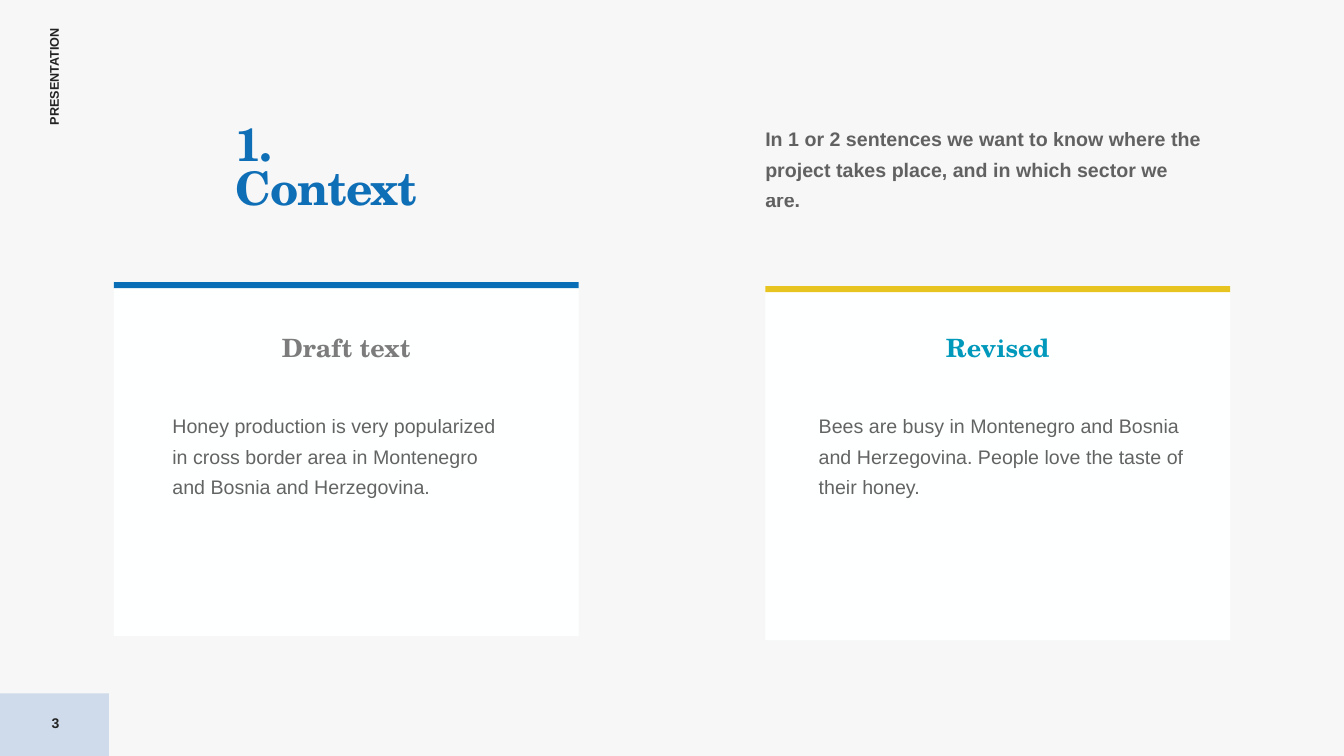
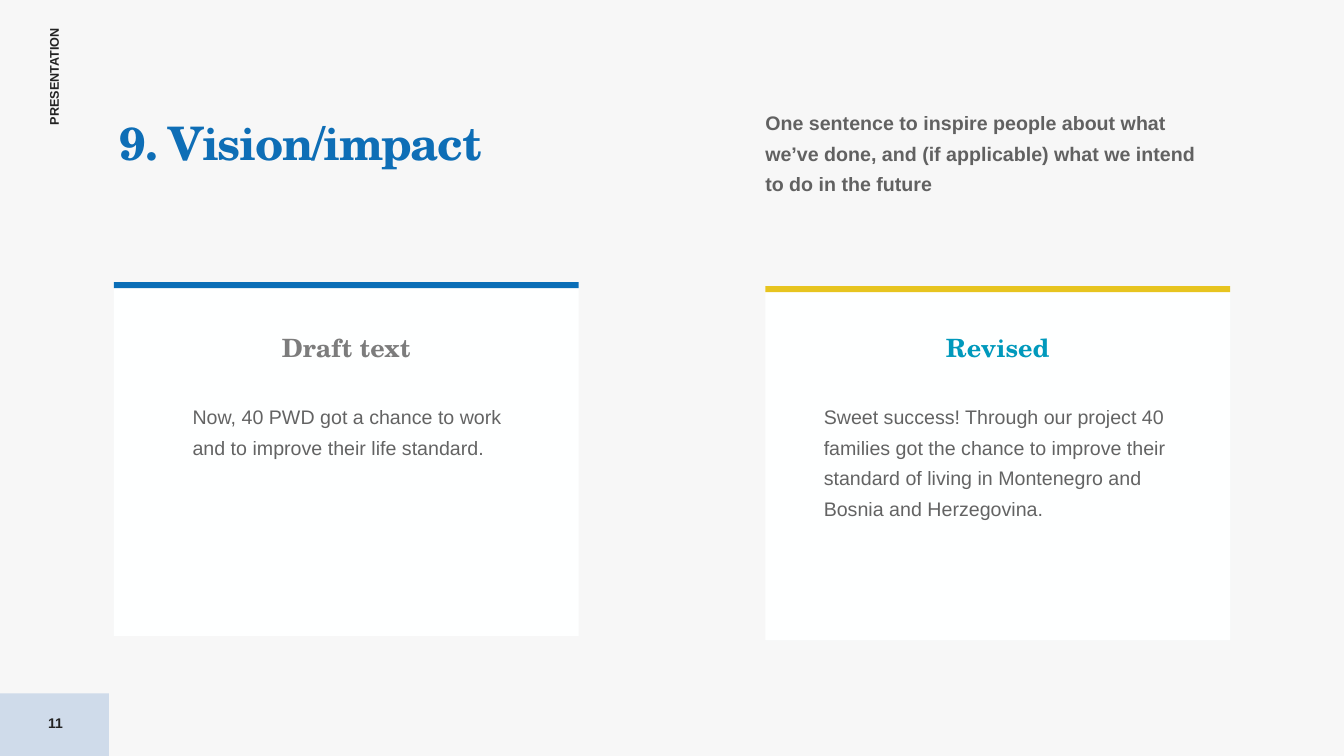
from lxml.etree import SubElement
from pptx import Presentation
from pptx.dml.color import RGBColor
from pptx.enum.shapes import MSO_SHAPE
from pptx.enum.text import MSO_ANCHOR, PP_ALIGN
from pptx.oxml.ns import qn
from pptx.util import Inches, Pt

COLORS = {
    "background": "F7F7F7", "card": "FEFFFF", "footer": "CFDBEA", "ink": "222222",
    "title": "0E6EB6", "blue": "0A6EB7", "yellow": "E7C41F",
    "gray": "7C7C7C", "teal": "0099BC",
}

# Insets run left, top, right, bottom.
BODY = {"font": {"name": "Arial", "size": Pt(14)}, "color": "ink", "opacity": 70,
        "line_spacing": 1.3, "insets": (0, 0.04, 0.24, 0.04)}
HINT = {**BODY, "font": {**BODY["font"], "bold": True}}
TITLE = {"font": {"name": "TeX Gyre Schola", "size": Pt(33), "bold": True},
         "color": "title", "line_spacing": 0.8, "tracking": -1,
         "insets": (0, 0.21, 0, 0)}
HEADING = {"font": {"name": "TeX Gyre Schola", "size": Pt(18), "bold": True},
           "line_spacing": 1.3, "insets": (0, 0, 0, 0),
           "alignment": PP_ALIGN.CENTER, "anchor": MSO_ANCHOR.MIDDLE}
LABEL = {"font": {"name": "Arial", "size": Pt(9), "bold": True},
         "color": "ink", "wrap": False}
NUMBER = {"font": {"name": "Arial", "size": Pt(10), "bold": True}, "color": "ink",
          "alignment": PP_ALIGN.CENTER, "anchor": MSO_ANCHOR.MIDDLE}

CARD_WIDTH, CARD_HEIGHT, STRIPE_HEIGHT = 4.61, 3.51, 0.06
HEADING_TOP, HEADING_WIDTH, HEADING_HEIGHT = 3.23, 3.45, 0.35
CARDS = [
    {"heading": "Draft text", "left": 1.13, "top": 2.8, "stripe": "blue", "color": "gray"},
    {"heading": "Revised", "left": 7.59, "top": 2.84, "stripe": "yellow", "color": "teal"},
]

# Each text is followed by its place: left, top, width, height.
PAGES = [
    {"number": "3",
     "title": ("1. Context", (2.34, 1.04, 2.2, 0.89)),
     "hint": ("In 1 or 2 sentences we want to know where the project takes place, "
              "and in which sector we are.", (7.59, 1.15, 4.61, 0.97)),
     "bodies": [
         ("Honey production is very popularized in cross border area in Montenegro "
          "and Bosnia and Herzegovina.", (1.71, 4, 3.63, 0.97)),
         ("Bees are busy in Montenegro and Bosnia and Herzegovina. People love the "
          "taste of their honey.", (8.12, 4, 4.03, 0.97))]},
    {"number": "11",
     "title": ("9. Vision/impact", (1.19, 1.03, 4.49, 0.89)),
     "hint": ("One sentence to inspire people about what we’ve done, and (if "
              "applicable) what we intend to do in the future", (7.59, 0.99, 4.61, 0.97)),
     "bodies": [
         ("Now, 40 PWD got a chance to work and to improve their life standard.",
          (1.91, 3.91, 3.63, 0.66)),
         ("Sweet success! Through our project 40 families got the chance to improve "
          "their standard of living in Montenegro and Bosnia and Herzegovina.",
          (8.17, 3.91, 3.88, 1.27))]},
]


def color(name):
    return RGBColor.from_string(COLORS[name])


def add_block(page, place, fill):
    block = page.shapes.add_shape(MSO_SHAPE.RECTANGLE, *map(Inches, place))
    block.shadow.inherit = False
    block.fill.solid()
    block.fill.fore_color.rgb = color(fill)
    block.line.fill.background()


def add_text(page, text, place, style):
    box = page.shapes.add_textbox(*map(Inches, place))
    frame = box.text_frame
    frame.word_wrap = style.get("wrap", True)
    frame.vertical_anchor = style.get("anchor", MSO_ANCHOR.TOP)
    for side, inset in zip(("left", "top", "right", "bottom"), style.get("insets", ())):
        setattr(frame, f"margin_{side}", Inches(inset))
    para = frame.paragraphs[0]
    para.alignment = style.get("alignment", PP_ALIGN.LEFT)
    para.line_spacing = style.get("line_spacing")
    span = para.add_run()
    span.text = text
    for name, value in style["font"].items():
        setattr(span.font, name, value)
    span.font.color.rgb = color(style["color"])
    properties = span.font._element
    if "opacity" in style:
        tint = properties.find(".//" + qn("a:srgbClr"))
        SubElement(tint, qn("a:alpha"), val=str(style["opacity"] * 1000))
    if "tracking" in style:
        properties.set("spc", str(style["tracking"] * 100))
    return box


def add_frame(page, number):
    """Add the side label and page number that every slide carries."""
    add_block(page, (0, 6.88, 1.08, 0.62), "footer")
    label = add_text(page, "PRESENTATION", (-0.06, 0.62, 1.19, 0.25), LABEL)
    label.rotation = 270
    add_text(page, number, (0, 6.97, 1.1, 0.4), NUMBER)


def add_card(page, card, body):
    left, top = card["left"], card["top"]
    add_block(page, (left, top, CARD_WIDTH, CARD_HEIGHT), "card")
    add_block(page, (left, top, CARD_WIDTH, STRIPE_HEIGHT), card["stripe"])
    heading_left = left + (CARD_WIDTH - HEADING_WIDTH) / 2
    add_text(page, card["heading"],
             (heading_left, HEADING_TOP, HEADING_WIDTH, HEADING_HEIGHT),
             {**HEADING, "color": card["color"]})
    add_text(page, *body, BODY)


def main():
    deck = Presentation()
    deck.slide_width, deck.slide_height = Inches(13.33), Inches(7.5)
    backdrop = deck.slide_master.background.fill
    backdrop.solid()
    backdrop.fore_color.rgb = color("background")
    for content in PAGES:
        page = deck.slides.add_slide(deck.slide_layouts[6])
        add_frame(page, content["number"])
        add_text(page, *content["title"], TITLE)
        add_text(page, *content["hint"], HINT)
        for card, body in zip(CARDS, content["bodies"]):
            add_card(page, card, body)
    deck.save("out.pptx")


if __name__ == "__main__":
    main()
